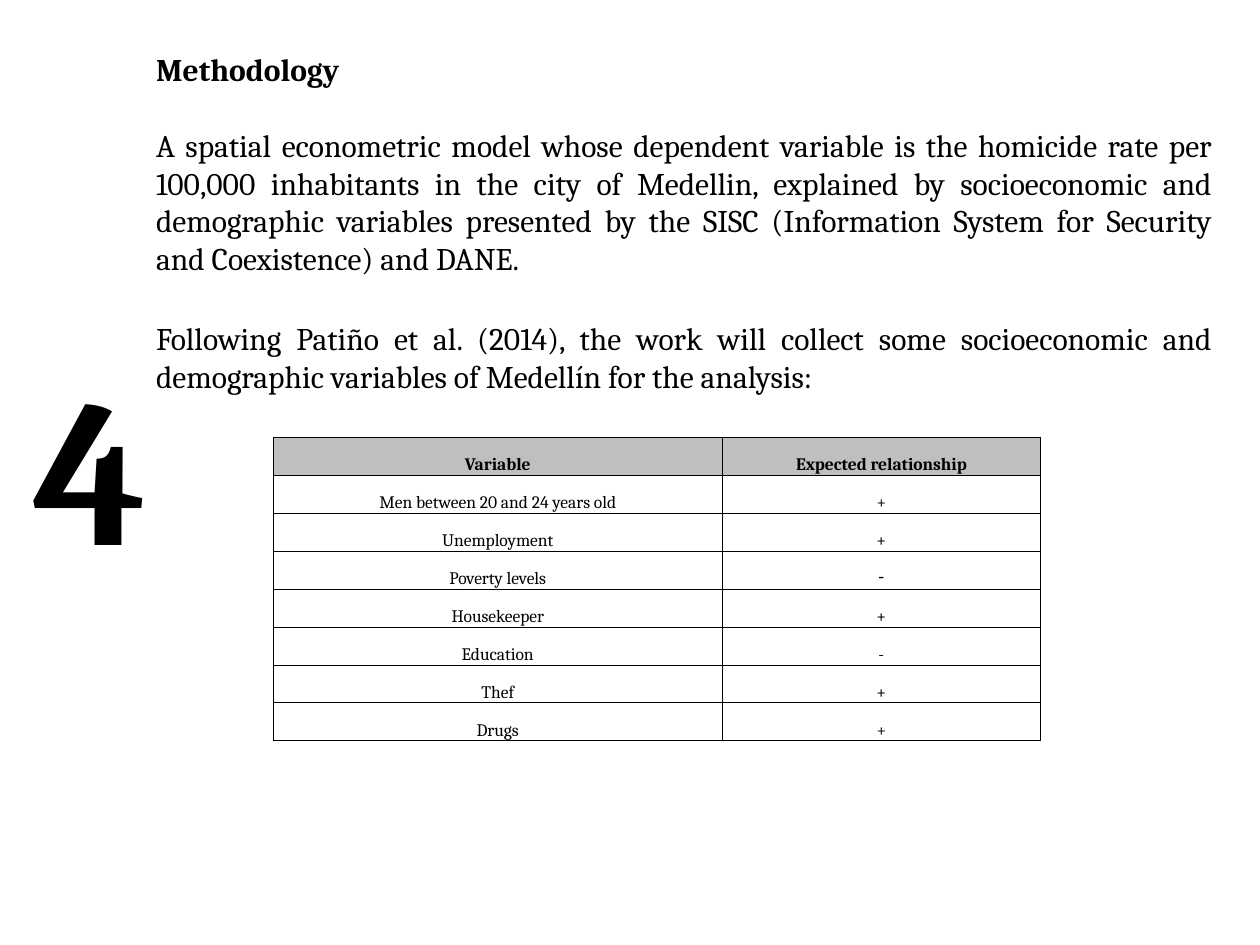
"""Build the methodology slide with its table of expected relationships."""
from dataclasses import dataclass
from typing import Any

from lxml.etree import SubElement
from pptx import Presentation
from pptx.dml.color import RGBColor
from pptx.enum.text import MSO_ANCHOR, PP_ALIGN
from pptx.oxml.ns import qn
from pptx.util import Inches, Pt


@dataclass(frozen=True)
class Theme:
    serif: str = "Cambria"
    sans: str = "Calibri"
    ink: str = "000000"
    header: str = "BFBFBF"
    body: float = 18
    number: float = 118
    cell: float = 10
    plus: float = 9
    minus: float = 11
    border: float = 0.5


THEME = Theme()


@dataclass(frozen=True)
class Span:
    text: str
    size: float = THEME.cell
    font: str = THEME.serif
    bold: bool = False
    align: PP_ALIGN = PP_ALIGN.CENTER
    before: float = 0


@dataclass(frozen=True)
class Area:
    left: float
    top: float
    width: float
    height: float

    def lengths(self) -> list[int]:
        return [Inches(v) for v in (self.left, self.top, self.width, self.height)]


def apply(target: Any, values: dict[str, Any]) -> None:
    for name, value in values.items():
        setattr(target, name, value)


def write(frame: Any, spans: list[Span]) -> None:
    for index, span in enumerate(spans):
        para = frame.add_paragraph() if index else frame.paragraphs[0]
        apply(para, {"alignment": span.align, "space_before": Pt(span.before)})
        run = para.add_run()
        run.text = span.text
        apply(run.font, {"size": Pt(span.size), "name": span.font, "bold": span.bold})
        run.font.color.rgb = RGBColor.from_string(THEME.ink)


def add_text(page: Any, area: Area, spans: list[Span], wrap: bool = True) -> None:
    box = page.shapes.add_textbox(*area.lengths())
    box.text_frame.word_wrap = wrap
    write(box.text_frame, spans)


def add_borders(cell: Any) -> None:
    properties = cell._tc.get_or_add_tcPr()
    for side in ("a:lnL", "a:lnR", "a:lnT", "a:lnB"):
        line = SubElement(properties, qn(side), w=str(Pt(THEME.border)))
        SubElement(SubElement(line, qn("a:solidFill")), qn("a:srgbClr"), val=THEME.ink)


def add_table(page: Any, area: Area, widths: list[float], rows: list[tuple[Span, Span]]) -> None:
    table = page.shapes.add_table(len(rows), len(widths), *area.lengths()).table
    apply(table, {"first_row": False, "horz_banding": False})
    for column, width in zip(table.columns, widths):
        column.width = Inches(width)
    edge = Inches(0.01)
    layout = {"vertical_anchor": MSO_ANCHOR.BOTTOM, "margin_left": edge,
              "margin_right": edge, "margin_top": edge, "margin_bottom": 0}
    for row_index, row in enumerate(rows):
        for column_index, span in enumerate(row):
            cell = table.cell(row_index, column_index)
            apply(cell, layout)
            add_borders(cell)
            if row_index:
                cell.fill.background()
            else:
                cell.fill.solid()
                cell.fill.fore_color.rgb = RGBColor.from_string(THEME.header)
            write(cell.text_frame, [span])


def main() -> None:
    deck = Presentation()
    apply(deck, {"slide_width": Inches(10), "slide_height": Inches(7.5)})
    page = deck.slides.add_slide(deck.slide_layouts[6])

    body = {"size": THEME.body, "align": PP_ALIGN.JUSTIFY}
    add_text(page, Area(1.14, 0.35, 8.58, 4.75), [
        Span("Methodology", bold=True, **body),
        Span("A spatial econometric model whose dependent variable is the homicide rate "
             "per 100,000 inhabitants in the city of Medellin, explained by socioeconomic "
             "and demographic variables presented by the SISC (Information System for "
             "Security and Coexistence) and DANE.", before=21.5, **body),
        Span("Following Patiño et al. (2014), the work will collect some socioeconomic "
             "and demographic variables of Medellín for the analysis:", before=24, **body),
    ])

    plus, minus = Span("+"), Span("-")
    small_plus = Span("+", THEME.plus, THEME.sans)
    large_minus = Span("-", THEME.minus, THEME.sans)
    add_table(page, Area(2.17, 3.47, 6.09, 2.41), [3.56, 2.53], [
        (Span("Variable", bold=True), Span("Expected relationship", bold=True)),
        (Span("Men between 20 and 24 years old"), plus),
        (Span("Unemployment"), small_plus),
        (Span("Poverty levels"), large_minus),
        (Span("Housekeeper"), small_plus),
        (Span("Education"), minus),
        (Span("Thef"), small_plus),
        (Span("Drugs"), plus),
    ])

    number = Span("4", THEME.number, bold=True, align=PP_ALIGN.LEFT)
    add_text(page, Area(0.17, 2.64, 1.18, 3.7), [number], wrap=False)
    deck.save("out.pptx")


if __name__ == "__main__":
    main()
